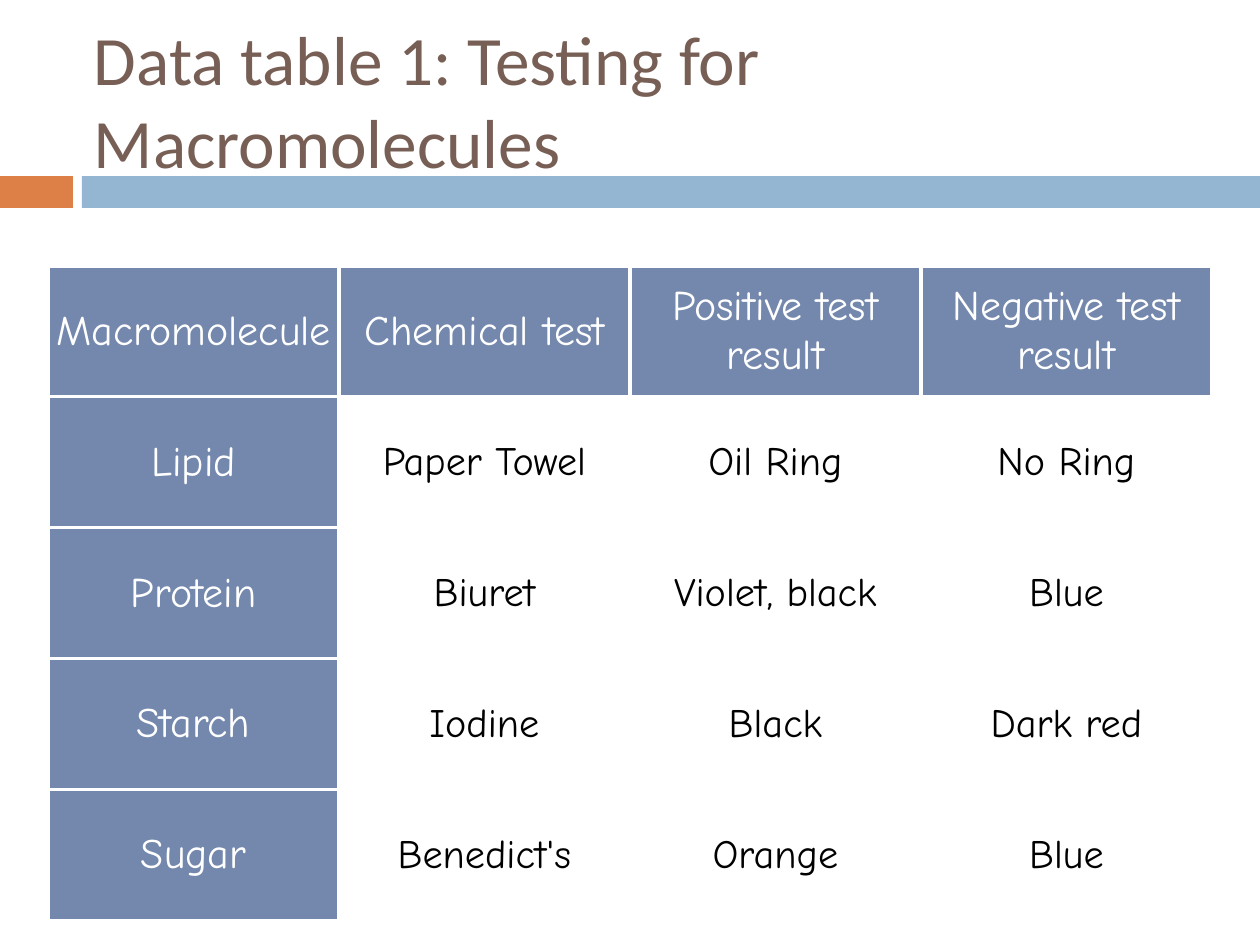
from dataclasses import dataclass

from lxml import etree
from pptx import Presentation, util as u
from pptx.dml.color import RGBColor
from pptx.enum import shapes, text
from pptx.oxml import ns

EMU_PER_PX = u.Inches(1) / 126


def px(length):
    return u.Emu(round(length * EMU_PER_PX))


@dataclass(frozen=True)
class Theme:
    title_font: str = "Calibri"
    table_font: str = "Comic Neue"
    title_size: float = 39.6
    header_size: float = 24
    body_size: float = 23
    title: str = "775F55"
    accent: str = "DD8047"
    band: str = "94B6D2"
    header: str = "7488AD"
    white: str = "FFFFFF"
    black: str = "000000"
    border_width: float = 2


class SlideBuilder:
    def __init__(self, slide, theme):
        self.slide = slide
        self.theme = theme

    def bar(self, left, top, width, height, color):
        bar = self.slide.shapes.add_shape(
            shapes.MSO_SHAPE.RECTANGLE, px(left), px(top), px(width), px(height))
        bar.shadow.inherit = False
        bar.fill.solid()
        bar.fill.fore_color.rgb = RGBColor.from_string(color)
        bar.line.fill.background()

    def add_run(self, paragraph, wording, font, size, color):
        run = paragraph.add_run()
        run.text = wording
        run.font.name = font
        run.font.size = u.Pt(size)
        run.font.bold = False
        run.font.color.rgb = RGBColor.from_string(color)

    def title(self, left, top, width, height, wording):
        box = self.slide.shapes.add_textbox(px(left), px(top), px(width), px(height))
        frame = box.text_frame
        frame.word_wrap = True
        frame.vertical_anchor = text.MSO_ANCHOR.MIDDLE
        frame.margin_left = frame.margin_right = px(9)
        frame.margin_top = frame.margin_bottom = px(5)
        self.add_run(frame.paragraphs[0], wording, self.theme.title_font,
                     self.theme.title_size, self.theme.title)

    def borders(self, cell):
        properties = cell._tc.get_or_add_tcPr()
        for index, side in enumerate(("lnL", "lnR", "lnT", "lnB")):
            line = etree.Element(ns.qn(f"a:{side}"), w=str(u.Pt(self.theme.border_width)))
            fill = etree.SubElement(line, ns.qn("a:solidFill"))
            etree.SubElement(fill, ns.qn("a:srgbClr"), val=self.theme.white)
            properties.insert(index, line)

    def cell(self, cell, wording, is_header):
        theme = self.theme
        if is_header:
            cell.fill.solid()
            cell.fill.fore_color.rgb = RGBColor.from_string(theme.header)
        else:
            cell.fill.background()
        self.borders(cell)
        cell.vertical_anchor = text.MSO_ANCHOR.MIDDLE
        cell.margin_left = cell.margin_right = px(5)
        cell.margin_top = cell.margin_bottom = px(5)
        paragraph = cell.text_frame.paragraphs[0]
        paragraph.alignment = text.PP_ALIGN.CENTER
        self.add_run(paragraph, wording, theme.table_font,
                     theme.header_size if is_header else theme.body_size,
                     theme.white if is_header else theme.black)

    def table(self, left, top, column_width, row_height, rows):
        table = self.slide.shapes.add_table(
            len(rows), len(rows[0]), px(left), px(top),
            px(column_width * len(rows[0])), px(row_height * len(rows))).table
        table.horz_banding = False
        table.first_col = True
        for column in table.columns:
            column.width = px(column_width)
        for r, row in enumerate(rows):
            table.rows[r].height = px(row_height)
            for c, wording in enumerate(row):
                self.cell(table.cell(r, c), wording, is_header=r == 0 or c == 0)


MACROMOLECULE_TESTS = [
    ("Macromolecule", "Chemical test", "Positive test result", "Negative test result"),
    ("Lipid", "Paper Towel", "Oil Ring", "No Ring"),
    ("Protein", "Biuret", "Violet, black", "Blue"),
    ("Starch", "Iodine", "Black", "Dark red"),
    ("Sugar", "Benedict's", "Orange", "Blue"),
]


def main():
    deck = Presentation()
    deck.slide_width, deck.slide_height = px(1260), px(945)
    theme = Theme()
    builder = SlideBuilder(deck.slides.add_slide(deck.slide_layouts[6]), theme)

    # Divider under the title
    builder.bar(0, 176, 73, 32, theme.accent)
    builder.bar(82, 176, 1178, 32, theme.band)

    # Title
    builder.title(85, 31, 1124, 137, "Data table 1: Testing for Macromolecules")

    # Test results
    builder.table(48, 266, 291, 131, MACROMOLECULE_TESTS)

    deck.save("out.pptx")


if __name__ == "__main__":
    main()
